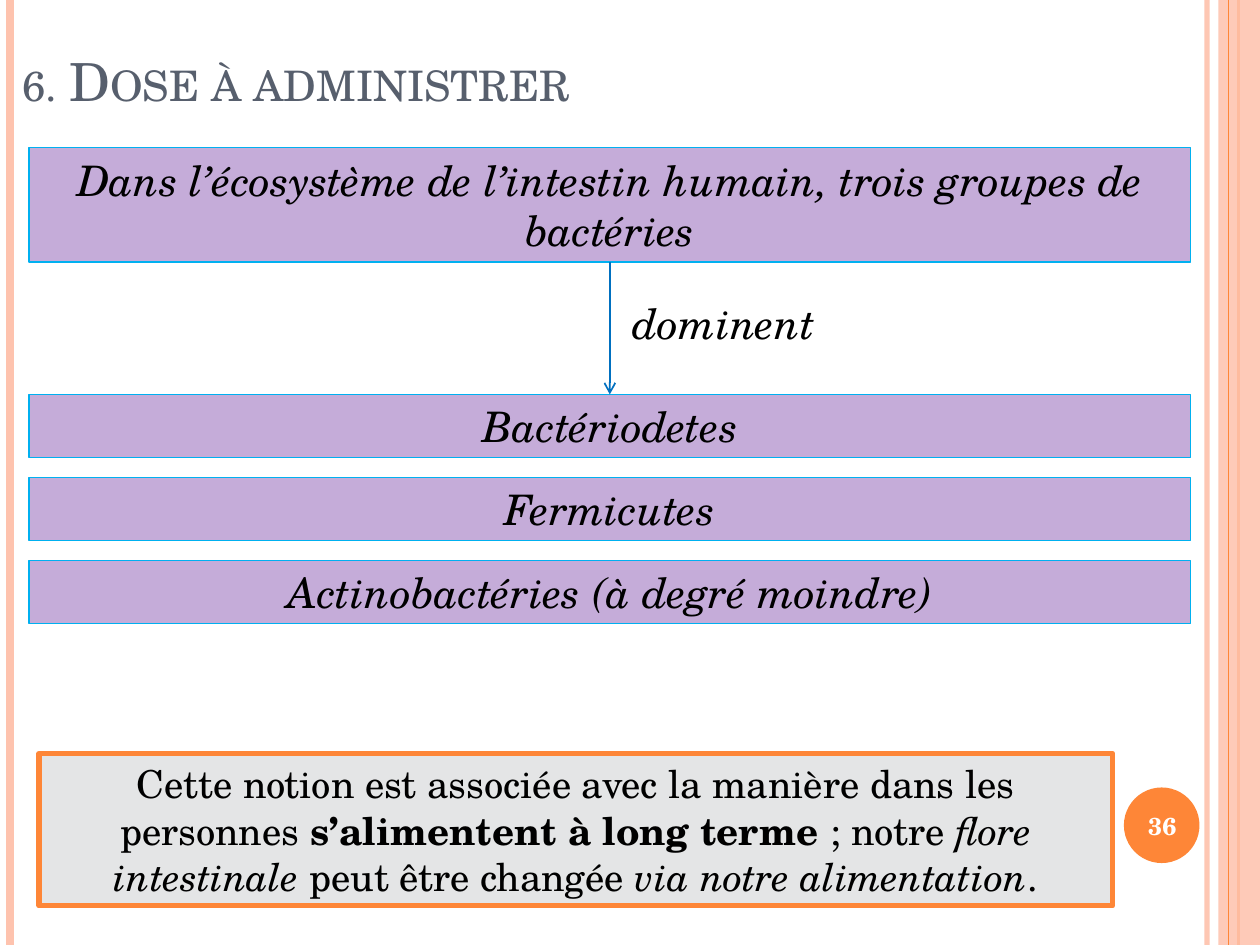
from lxml.etree import SubElement
from pptx import Presentation
from pptx.dml.color import RGBColor
from pptx.enum.shapes import MSO_CONNECTOR, MSO_SHAPE
from pptx.enum.text import MSO_ANCHOR, MSO_AUTO_SIZE, PP_ALIGN
from pptx.oxml.ns import qn
from pptx.util import Inches, Pt

WIDTH, HEIGHT = 10, 7.5
FONT = "TeX Gyre Schola"
ORANGE, PEACH, PURPLE = "FE8637", "FEC3AE", "7030A0"
ITALIC = {"italic": True}

TITLE = "6. Dose à administrer"
HEADING = "Dans l’écosystème de l’intestin humain, trois groupes de bactéries"
VERB = "dominent"
GROUPS = ["Bactériodetes", "Fermicutes", "Actinobactéries (à degré moindre)"]
CONCLUSION = [
    ("Cette notion est associée avec la manière dans les personnes ", {}),
    ("s’alimentent à long terme ", {"bold": True}),
    ("; notre ", {}),
    ("flore intestinale", ITALIC),
    (" peut être changée ", {}),
    ("via notre alimentation", ITALIC),
    (".", {}),
]
PAGE_NUMBER = "36"

LEFT_RULES = [(9.58, PEACH, 3, 93), (0.08, PEACH, 4.5, 100), (9.83, ORANGE, 1.5, 100)]
INNER_RULE = (9.75, ORANGE, 0.75, 100)
BAND = (9.67, 0, WIDTH - 9.67, HEIGHT)
BADGE = (8.92, 6.25, 0.6, 0.6)
COLUMN_LEFT, COLUMN_WIDTH = 0.23, 9.22
GROUP_TOP, GROUP_HEIGHT, GROUP_STEP = 3.13, 0.5, 0.66


def color(value):
    """Turn a hex string into a colour."""
    return RGBColor.from_string(value)


def set_opacity(element, percent):
    """Give the first solid colour of an element its opacity."""
    if percent < 100:
        tint = next(element.iter(qn("a:srgbClr")))
        SubElement(tint, qn("a:alpha"), val=str(percent * 1000))


def write(shape, runs, size, ink="000000", align=PP_ALIGN.CENTER, **frame_format):
    """Fill the first paragraph of a shape with formatted runs."""
    frame = shape.text_frame
    for name, value in {"word_wrap": True, **frame_format}.items():
        setattr(frame, name, value)
    para = frame.paragraphs[0]
    para.alignment = align
    for text, styles in runs:
        span = para.add_run()
        span.text = text
        span.font.color.rgb = color(ink)
        for name, value in {"name": FONT, "size": Pt(size), **styles}.items():
            setattr(span.font, name, value)
    return para


def add_box(page, place, fill, opacity=100, line=None, line_width=0.75, kind=MSO_SHAPE.RECTANGLE):
    """Draw a filled shape with an optional outline."""
    box = page.shapes.add_shape(kind, *map(Inches, place))
    box.shadow.inherit = False
    box.fill.solid()
    box.fill.fore_color.rgb = color(fill)
    set_opacity(box.fill._xPr, opacity)
    if line:
        box.line.color.rgb = color(line)
        box.line.width = Pt(line_width)
    else:
        box.line.fill.background()
    return box


def add_line(page, start, end, ink, width, opacity=100):
    """Draw a straight line without a shadow."""
    line = page.shapes.add_connector(MSO_CONNECTOR.STRAIGHT, *map(Inches, start + end))
    line.line.color.rgb = color(ink)
    line.line.width = Pt(width)
    set_opacity(line.line._ln, opacity)
    SubElement(line._element.spPr, qn("a:effectLst"))
    return line


def add_rule(page, x, *style):
    """Draw a vertical rule over the full height."""
    add_line(page, (x, 0), (x, HEIGHT), *style)


def add_purple_box(page, text, top, height):
    """Draw a full-width purple box with italic text."""
    box = add_box(page, (COLUMN_LEFT, top, COLUMN_WIDTH, height), PURPLE, 40, "00B0F0")
    write(box, [(text, ITALIC)], 24, auto_size=MSO_AUTO_SIZE.SHAPE_TO_FIT_TEXT)
    return box


def add_label(page, place, *content, **formats):
    """Write text in a box of its own."""
    write(page.shapes.add_textbox(*map(Inches, place)), *content, **formats)


def main():
    """Build the slide and save it."""
    deck = Presentation()
    deck.slide_width, deck.slide_height = Inches(WIDTH), Inches(HEIGHT)
    page = deck.slides.add_slide(deck.slide_layouts[5])

    for rule in LEFT_RULES:
        add_rule(page, *rule)
    add_box(page, BAND, PEACH, 87)
    add_rule(page, *INNER_RULE)
    add_box(page, BADGE, ORANGE, kind=MSO_SHAPE.OVAL)

    title = page.shapes.title
    title.left, title.top, title.width, title.height = map(Inches, (0.08, -0.31, 8.17, 1.25))
    para = write(title, [(TITLE, {})], 30, "575F6D", PP_ALIGN.LEFT,
                 vertical_anchor=MSO_ANCHOR.BOTTOM, auto_size=MSO_AUTO_SIZE.NONE)
    para.runs[0].font._element.set("cap", "small")

    heading = add_purple_box(page, HEADING, 1.17, 0.91)
    groups = [add_purple_box(page, name, GROUP_TOP + row * GROUP_STEP, GROUP_HEIGHT)
              for row, name in enumerate(GROUPS)]
    middle = COLUMN_LEFT + COLUMN_WIDTH / 2
    arrow = add_line(page, (middle, 2.08), (middle, GROUP_TOP), "0070C0", 1)
    arrow.begin_connect(heading, 2)
    arrow.end_connect(groups[0], 0)
    SubElement(arrow.line._ln, qn("a:tailEnd"), type="arrow")
    add_label(page, (4.92, 2.31, 3.44, 0.5), [(VERB, ITALIC)], 24, align=PP_ALIGN.LEFT)

    conclusion = add_box(page, (0.31, 5.98, 8.52, 1.21), "E4E5E6", line=ORANGE, line_width=3)
    write(conclusion, CONCLUSION, 22, auto_size=MSO_AUTO_SIZE.SHAPE_TO_FIT_TEXT)
    add_label(page, (8.89, 6.27, 0.67, 0.57), [(PAGE_NUMBER, {"bold": True})], 14, "FFFFFF",
              vertical_anchor=MSO_ANCHOR.MIDDLE)

    deck.save("out.pptx")


if __name__ == "__main__":
    main()
